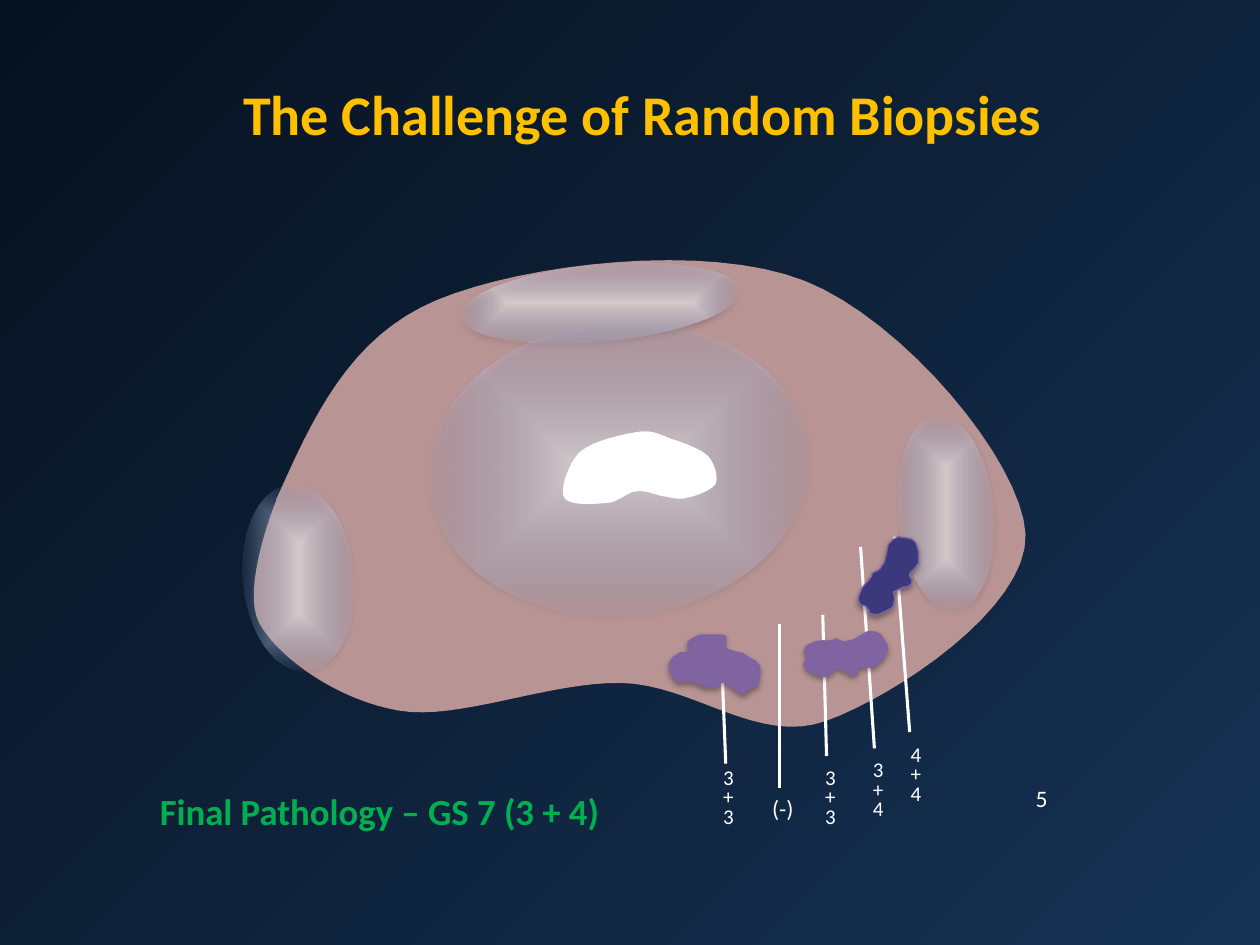
from lxml import etree
from pptx import Presentation
from pptx.dml.color import RGBColor
from pptx.enum.shapes import MSO_CONNECTOR as Connector, MSO_SHAPE as Shape
from pptx.enum.text import MSO_ANCHOR as Anchor, MSO_AUTO_SIZE as AutoSize, PP_ALIGN as Align
from pptx.oxml import parse_xml
from pptx.oxml.ns import nsdecls, qn
from pptx.util import Cm, Pt

COLORS = {
    "night": "071220", "navy": "153153", "tissue": "B89494", "white": "FFFFFF",
    "haze": "9BC1FF", "violet": "8064A2", "indigo": "3B387C", "title": "FFC000",
    "result": "00B050", "shadow": "000000",
}

# All places below are in inches.
TITLE = ("The Challenge of Random Biopsies", (1.83, 0.58, 6.6, 1.18))
NOTES = [  # text, place, size, colour, bold
    ("Final Pathology – GS 7 (3 + 4)", (1.17, 6.21, 3.72, 0.45), 21, "result", True),
    ("5", (8.12, 6.17, 0.62, 0.39), 13.5, "white", False),
]
CORES = [  # needle start, needle end, score, score place, size
    ((5.72, 5.04), (5.76, 6.06), "3+3", (5.64, 6.06, 0.53, 0.56), 12),
    ((6.53, 4.88), (6.56, 6.00), "3+3", (6.45, 6.06, 0.53, 0.56), 12),
    ((7.10, 4.26), (7.22, 5.81), "4+4", (7.13, 5.88, 0.53, 0.56), 12),
    ((6.19, 4.95), (6.19, 6.25), "(-)", (6.03, 6.32, 0.43, 0.26), 13.5),
    ((6.83, 4.34), (6.94, 5.94), "3+4", (6.83, 6.00, 0.53, 0.56), 12),
]
ZONES = [
    (3.65, 2.10, 2.22, 0.61), (1.93, 3.84, 0.88, 1.49),
    (7.13, 3.30, 0.76, 1.55), (3.40, 2.56, 3.02, 2.32),
]
ZONE_TILT = 354.7

# Bezier outlines: a start point, then two controls and an end for each curve.
GLAND = [
    (2.19, 3.97), (2.48, 3.32), (2.77, 2.67), (3.47, 2.38), (4.17, 2.09), (5.61, 1.92),
    (6.39, 2.23), (7.17, 2.54), (8.11, 3.66), (8.14, 4.24), (8.16, 4.83), (7.09, 5.53),
    (6.56, 5.72), (6.02, 5.92), (5.50, 5.43), (4.93, 5.42), (4.36, 5.41), (3.64, 5.72),
    (3.17, 5.64), (2.69, 5.56), (2.22, 5.23), (2.06, 4.95), (1.90, 4.67), (2.21, 3.92),
    (2.20, 3.96),
]
URETHRA = [
    (5.62, 3.62), (5.56, 3.56), (5.41, 3.51), (5.32, 3.48), (5.22, 3.44), (5.17, 3.41),
    (5.05, 3.43), (4.93, 3.45), (4.70, 3.50), (4.60, 3.59), (4.51, 3.68), (4.44, 3.89),
    (4.48, 3.95), (4.52, 4.02), (4.73, 4.00), (4.83, 3.99), (4.92, 3.98), (4.98, 3.90),
    (5.06, 3.90), (5.13, 3.89), (5.21, 3.93), (5.27, 3.94), (5.34, 3.95), (5.39, 3.97),
    (5.45, 3.95), (5.52, 3.94), (5.65, 3.89), (5.68, 3.84), (5.70, 3.79), (5.68, 3.69),
    (5.62, 3.62),
]
# Straight-edged outlines of the lesions.
WIDE_LESION = [
    (5.49, 5.17), (5.46, 5.15), (5.46, 5.10), (5.48, 5.08), (5.53, 5.05), (5.57, 5.04),
    (5.72, 5.04), (5.76, 5.05), (5.76, 5.15), (5.82, 5.17), (5.90, 5.19), (5.93, 5.21),
    (5.98, 5.24), (6.00, 5.25), (6.03, 5.29), (6.03, 5.34), (6.02, 5.42), (6.01, 5.44),
    (5.96, 5.46), (5.92, 5.50), (5.88, 5.50), (5.85, 5.48), (5.79, 5.44), (5.76, 5.41),
    (5.72, 5.42), (5.70, 5.45), (5.59, 5.45), (5.55, 5.43), (5.51, 5.41), (5.37, 5.41),
    (5.34, 5.36), (5.32, 5.34), (5.31, 5.28), (5.32, 5.25), (5.34, 5.22), (5.37, 5.20),
    (5.40, 5.18), (5.45, 5.18),
]
LONG_LESION = [
    (6.90, 4.85), (6.87, 4.81), (6.83, 4.80), (6.81, 4.76), (6.82, 4.72), (6.84, 4.67),
    (6.87, 4.63), (6.89, 4.61), (6.92, 4.57), (6.92, 4.55), (6.96, 4.53), (6.98, 4.52),
    (7.02, 4.46), (7.03, 4.42), (7.04, 4.37), (7.05, 4.32), (7.09, 4.28), (7.13, 4.26),
    (7.20, 4.27), (7.24, 4.28), (7.27, 4.31), (7.28, 4.34), (7.29, 4.38), (7.29, 4.47),
    (7.26, 4.51), (7.22, 4.55), (7.22, 4.57), (7.24, 4.61), (7.23, 4.64), (7.19, 4.66),
    (7.17, 4.66), (7.09, 4.70), (7.10, 4.74), (7.10, 4.76), (7.09, 4.81), (7.07, 4.83),
    (7.03, 4.85), (7.01, 4.86), (6.97, 4.88), (6.90, 4.87),
]
LESIONS = [  # outline, fill, left and top, rotation
    (LONG_LESION, "indigo", (6.81, 4.26), 0),
    (LONG_LESION, "violet", (6.46, 4.87), 48.1),
]


def lengths(inches):
    return [Cm(value * 2.54) for value in inches]


def rgb(name):
    return RGBColor.from_string(COLORS[name])


def set_path_gradient(owner, kind, stops, edges):
    """Fill a shape or the slide with (position, colour, opacity) stops around a focus."""
    owner_fill = owner.background.fill if hasattr(owner, "background") else owner.fill
    owner_fill.gradient()
    old = owner.element.find(".//" + qn("a:gradFill"))
    marks = "".join(
        f'<a:gs pos="{place * 1000}"><a:srgbClr val="{COLORS[name]}">'
        f'<a:alpha val="{opacity * 1000}"/></a:srgbClr></a:gs>'
        for place, name, opacity in stops)
    focus = " ".join(f'{side}="{value * 1000}"' for side, value in zip("ltrb", edges))
    old.getparent().replace(old, parse_xml(
        f'<a:gradFill {nsdecls("a")} rotWithShape="1"><a:gsLst>{marks}</a:gsLst>'
        f'<a:path path="{kind}"><a:fillToRect {focus}/></a:path></a:gradFill>'))


def add_shadow(shape):
    shape.shadow.inherit = False
    shape.element.find(".//" + qn("a:effectLst")).append(parse_xml(
        f'<a:outerShdw {nsdecls("a")} blurRad="40000" dist="23000" dir="5400000" '
        f'rotWithShape="0"><a:srgbClr val="{COLORS["shadow"]}"><a:alpha val="35000"/>'
        f'</a:srgbClr></a:outerShdw>'))


def curve_points(bezier, steps=16):
    points = [bezier[0]]
    for first in range(0, len(bezier) - 1, 3):
        corners = bezier[first:first + 4]
        for step in range(1, steps + 1):
            t = step / steps
            weights = ((1 - t) ** 3, 3 * t * (1 - t) ** 2, 3 * t * t * (1 - t), t ** 3)
            points.append(tuple(sum(w * corner[axis] for w, corner in zip(weights, corners))
                                for axis in (0, 1)))
    return points


def add_outline(shapes, points, fill, line=None):
    start, *rest = [lengths(point) for point in points]
    builder = shapes.build_freeform(*start)
    builder.add_line_segments(rest, close=True)
    shape = builder.convert_to_shape()
    shape.shadow.inherit = False
    shape.fill.solid()
    shape.fill.fore_color.rgb = rgb(fill)
    if line:
        shape.line.color.rgb = rgb(line)
        shape.line.width = Pt(0.75)
        add_shadow(shape)
    else:
        shape.line.fill.background()
    return shape


def write(box, lines, size, color, bold=False, wrap=True, spacing=None):
    frame = box.text_frame
    frame.text = "\n".join(lines)
    frame.word_wrap, frame.auto_size, frame.vertical_anchor = wrap, AutoSize.NONE, Anchor.TOP
    for para in frame.paragraphs:
        para.alignment = Align.LEFT
        if spacing:
            para.line_spacing = spacing
        for span in para.runs:
            for key, value in {"name": "Calibri", "size": Pt(size), "bold": bold}.items():
                setattr(span.font, key, value)
            span.font.color.rgb = rgb(color)


def main():
    deck = Presentation()
    deck.slide_width, deck.slide_height = lengths((10, 7.5))
    slide = deck.slides.add_slide(deck.slide_layouts[5])
    shapes = slide.shapes
    set_path_gradient(slide, "circle", [(0, "night", 100), (100, "navy", 93)], (0, 0, 100, 100))

    title = shapes.title
    text, place = TITLE
    title.left, title.top, title.width, title.height = lengths(place)
    write(title, [text], 32, "title", bold=True, wrap=False)

    add_outline(shapes, curve_points(GLAND), "tissue")
    for place in ZONES:
        zone = shapes.add_shape(Shape.OVAL, *lengths(place))
        zone.rotation = ZONE_TILT
        set_path_gradient(zone, "shape", [(0, "white", 62), (100, "haze", 0)], (50, 50, 50, 50))
        zone.line.fill.background()
        add_shadow(zone)

    for start, end, score, place, size in CORES:
        needle = shapes.add_connector(Connector.STRAIGHT, *lengths(start + end))
        needle.line.color.rgb = rgb("white")
        needle.line.width = Pt(1.75)
        etree.SubElement(needle.element.spPr, qn("a:effectLst"))
        lines = list(score) if "+" in score else [score]
        write(shapes.add_textbox(*lengths(place)), lines, size, "white", spacing=Pt(11.2))

    add_outline(shapes, WIDE_LESION, "violet", "violet")
    add_outline(shapes, curve_points(URETHRA), "white")
    for points, fill, corner, turn in LESIONS:
        lesion = add_outline(shapes, points, fill, "violet")
        lesion.left, lesion.top = lengths(corner)
        lesion.rotation = turn

    for text, place, size, color, bold in NOTES:
        write(shapes.add_textbox(*lengths(place)), [text], size, color, bold, wrap=False)
    deck.save("out.pptx")


if __name__ == "__main__":
    main()
